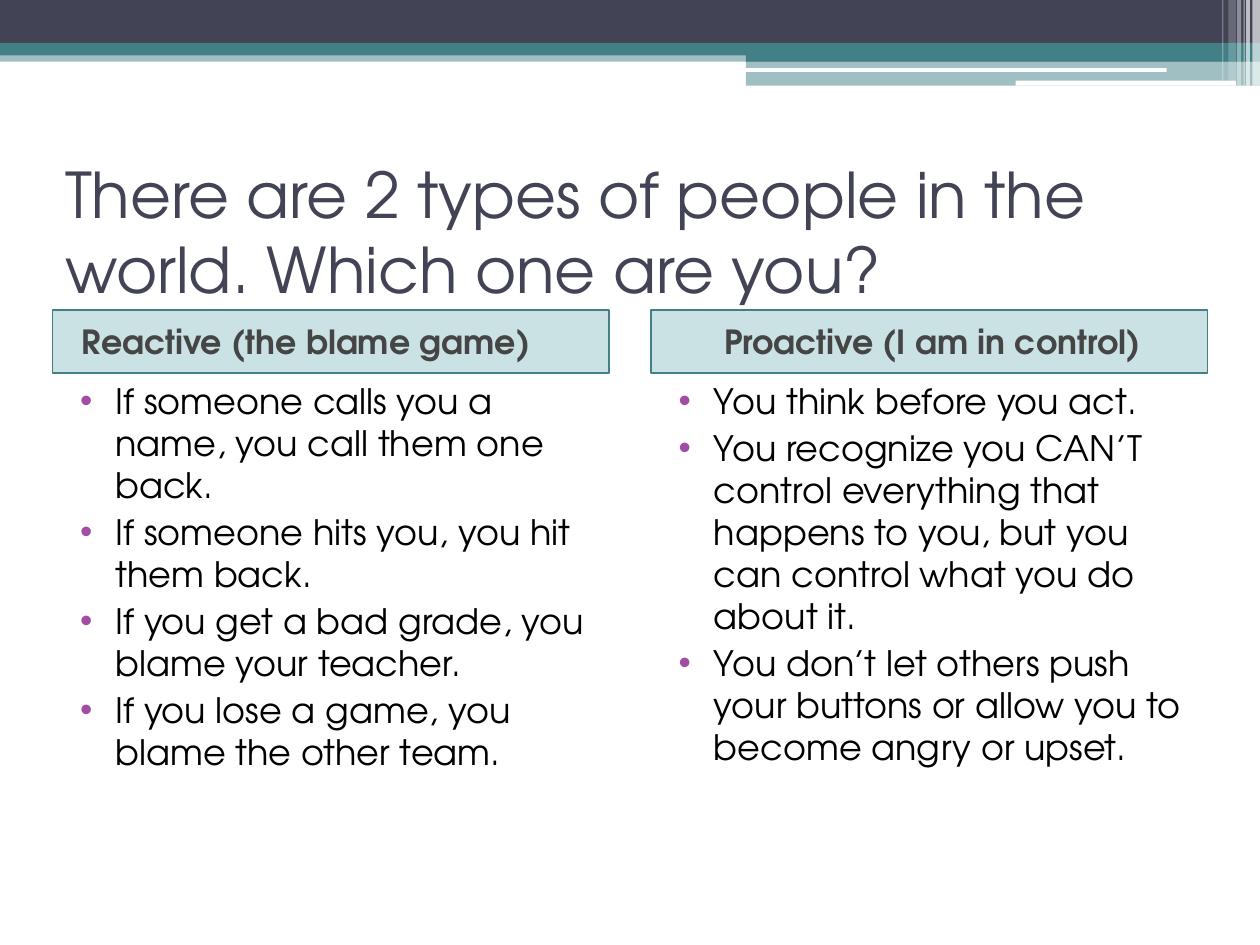
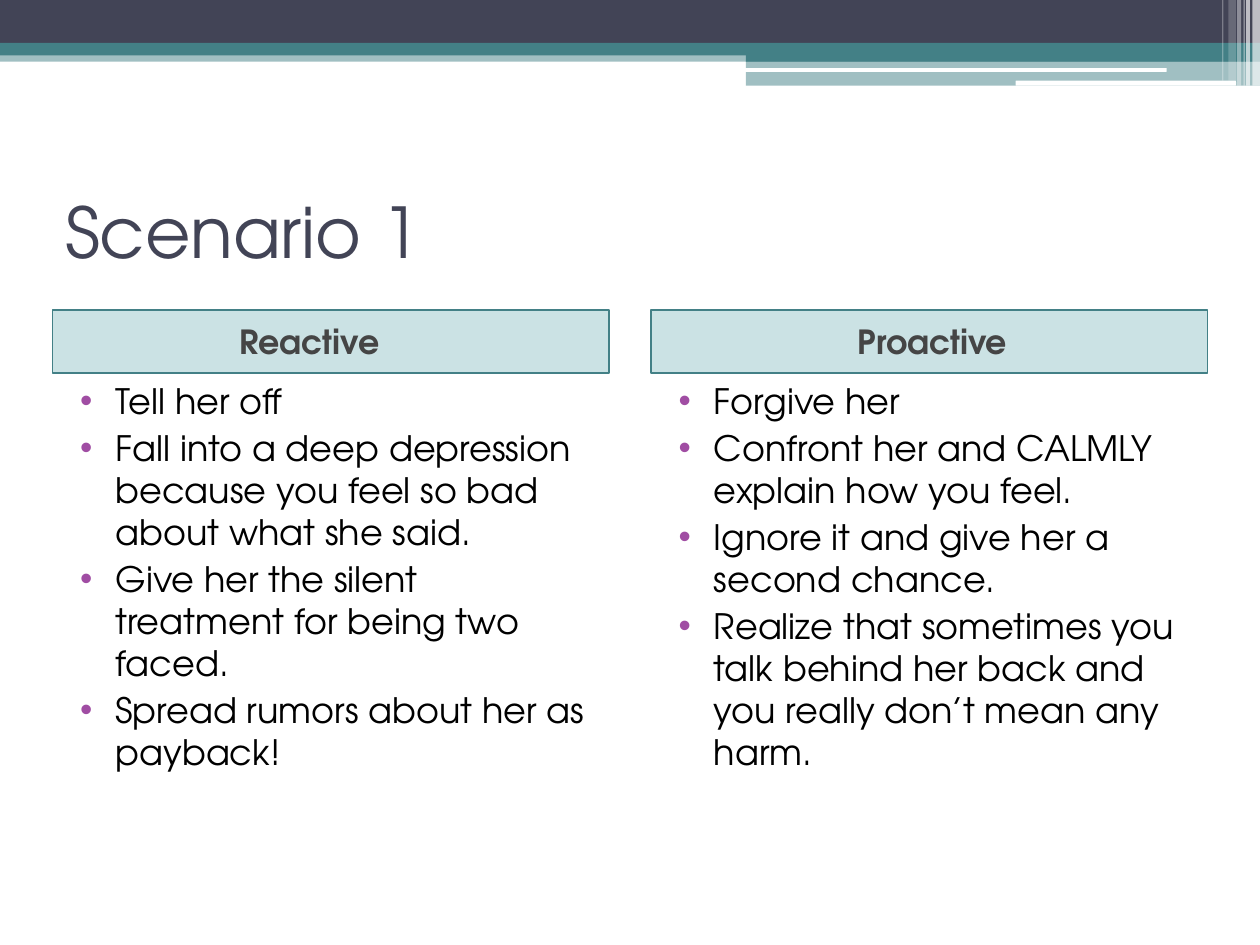
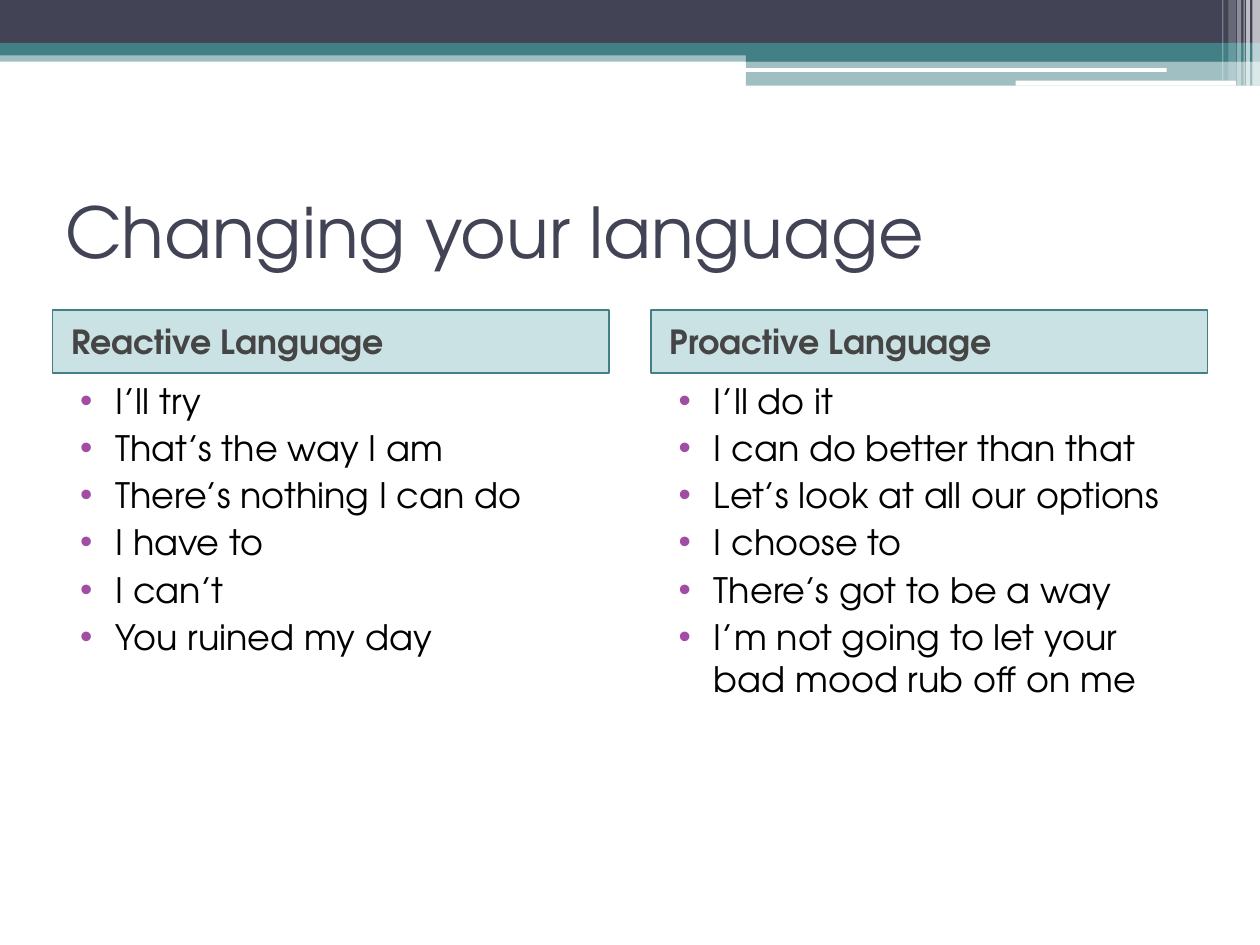
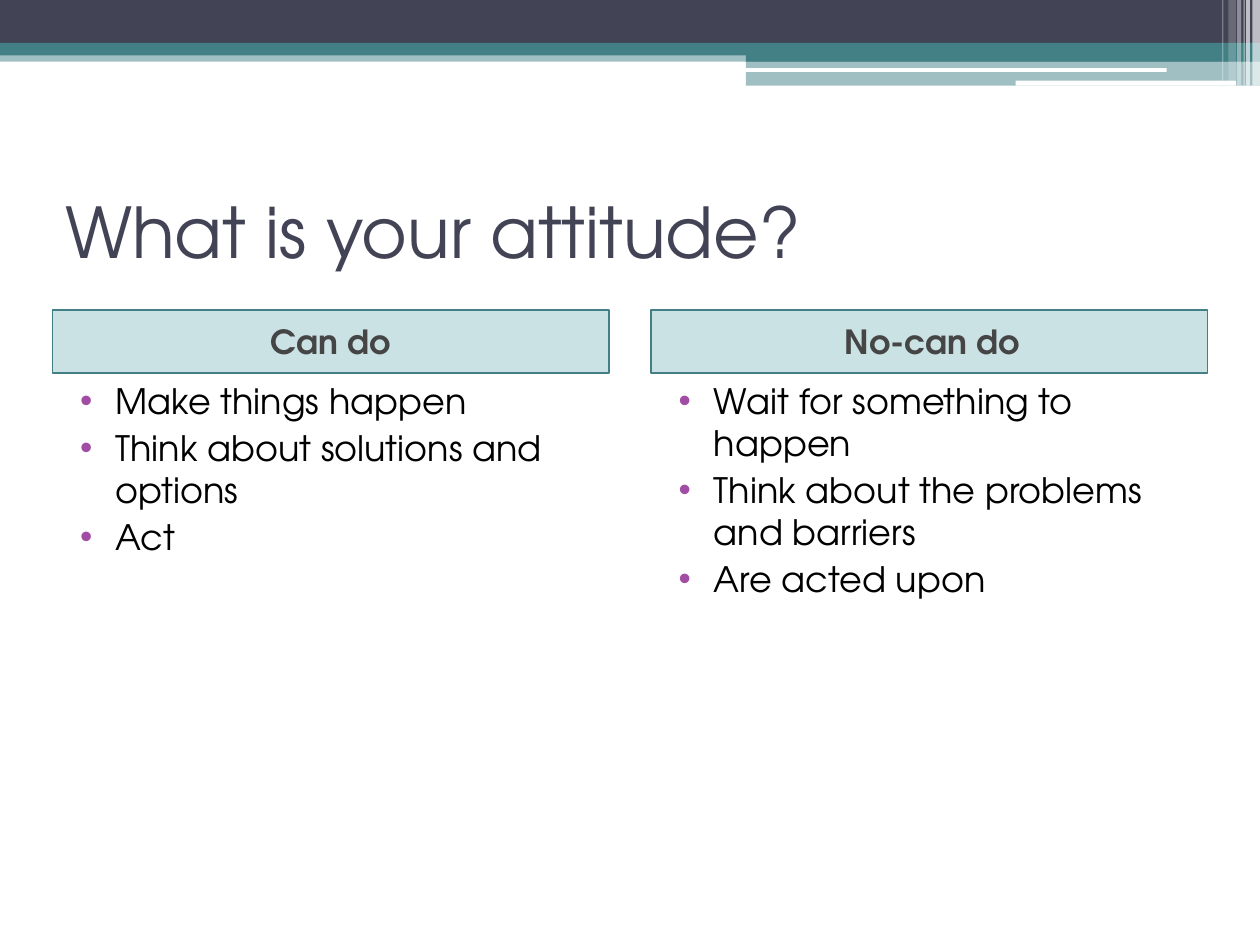
import pptx
import pptx.util
import pptx.dml.color
import pptx.enum.shapes
import pptx.enum.text
import pptx.oxml.ns
from lxml import etree

Pt = pptx.util.Pt
qn = pptx.oxml.ns.qn
SHAPE = pptx.enum.shapes.MSO_SHAPE
ALIGN = pptx.enum.text.PP_ALIGN

COLORS = {
    "navy": "424456",
    "teal": "438086",
    "panel": "328E97",
    "header": "454545",
    "bullet": "A04DA3",
    "black": "000000",
    "white": "FFFFFF",
}
FONT = "TeX Gyre Adventor"

# Page grid
MARGIN, COL_W, GUTTER = 30, 318, 24
TITLE_TOP, TITLE_H = 90, 84
HEADER_TOP, HEADER_H, LIST_H = 177, 36, 306

# Bands: shape, left, top, width, height, colour, opacity in percent
BANDS = [
    (SHAPE.RECTANGLE, 0, 28.8, 720, 6.5, "teal", 50),
    (SHAPE.RECTANGLE, 0, 0, 720, 24.5, "navy", 100),
    (SHAPE.RECTANGLE, 0, 24.5, 720, 7.2, "teal", 100),
    (SHAPE.RECTANGLE, 426.2, 28.1, 293.8, 7.2, "teal", 100),
    (SHAPE.RECTANGLE, 426.2, 34.6, 293.8, 14.4, "teal", 50),
    (SHAPE.ROUNDED_RECTANGLE, 425.5, 38.9, 241.2, 2.2, "white", 100),
    (SHAPE.ROUNDED_RECTANGLE, 580.3, 46.1, 126, 2.9, "white", 100),
]
# Stripes at the right edge: left, width, height, opacity in percent
STRIPES = [
    (715.7, 4.3, 49, 65),
    (712.1, 2.2, 49, 65),
    (710.6, 0.7, 49, 60),
    (707, 2.2, 49, 40),
    (702, 4.3, 46.1, 20),
    (698.4, 0.7, 46.1, 30),
]

# Title, title size, header alignment, then header and list of each column
SLIDES = [
    ("There are 2 types of people in the world. Which one are you?", 36, ALIGN.CENTER, [
        ("Reactive (the blame game)\t", [
            "If someone calls you a name, you call them one back.",
            "If someone hits you, you hit them back.",
            "If you get a bad grade, you blame your teacher.",
            "If you lose a game, you blame the other team."]),
        ("Proactive (I am in control)", [
            "You think before you act.",
            "You recognize you CAN’T control everything that happens to you, "
            "but you can control what you do about it.",
            "You don’t let others push your buttons or allow you to become "
            "angry or upset."])]),
    ("Scenario 1", 40, ALIGN.CENTER, [
        ("Reactive\t", [
            "Tell her off",
            "Fall into a deep depression because you feel so bad about what she said.",
            "Give her the silent treatment for being two faced.",
            "Spread rumors about her as payback!"]),
        ("Proactive", [
            "Forgive her",
            "Confront her and CALMLY explain how you feel.",
            "Ignore it and give her a second chance.",
            "Realize that sometimes you talk behind her back and you really "
            "don’t mean any harm."])]),
    ("Changing your language", 40, ALIGN.LEFT, [
        ("Reactive Language\t", [
            "I’ll try",
            "That’s the way I am",
            "There’s nothing I can do",
            "I have to",
            "I can’t",
            "You ruined my day"]),
        ("Proactive Language", [
            "I’ll do it",
            "I can do better than that",
            "Let’s look at all our options",
            "I choose to",
            "There’s got to be a way",
            "I’m not going to let your bad mood rub off on me"])]),
    ("What is your attitude?", 40, ALIGN.CENTER, [
        ("Can do\t", [
            "Make things happen",
            "Think about solutions and options",
            "Act"]),
        ("No-can do", [
            "Wait for something to happen",
            "Think about the problems and barriers",
            "Are acted upon"])]),
]


def rgb(name):
    return pptx.dml.color.RGBColor.from_string(COLORS[name])


class Deck:
    def __init__(self):
        self.prs = pptx.Presentation()
        self.prs.slide_width, self.prs.slide_height = Pt(720), Pt(540)
        self.layout = self.prs.slide_layouts.get_by_name("Comparison")
        self.s = None

    def new_slide(self):
        self.s = self.prs.slides.add_slide(self.layout)

    def fill(self, sp, color, opacity=100):
        sp.fill.solid()
        sp.fill.fore_color.rgb = rgb(color)
        if opacity < 100:
            clr = next(sp.element.iter(qn("a:srgbClr")))
            etree.SubElement(clr, qn("a:alpha")).set("val", str(opacity * 1000))

    def band(self, kind, x, y, w, h, color, opacity):
        """Draw a band and move it to the layout, so every slide shows it."""
        sp = self.s.shapes.add_shape(kind, Pt(x), Pt(y), Pt(w), Pt(h))
        sp.shadow.inherit = False
        self.fill(sp, color, opacity)
        sp.line.fill.background()
        tree = self.layout.shapes.element
        sp.element.nvSpPr.cNvPr.set("id", str(100 + len(tree)))
        tree.append(sp.element)

    def text(self, idx, box, lines, size, color, bold=False, middle=True):
        """Place a placeholder, write its paragraphs and format the runs."""
        sp = self.s.placeholders[idx]
        sp.left, sp.top, sp.width, sp.height = (Pt(v) for v in box)
        tf = sp.text_frame
        tf.text = "\n".join(lines)
        tf.word_wrap = True
        tf.auto_size = pptx.enum.text.MSO_AUTO_SIZE.NONE
        anchor = pptx.enum.text.MSO_ANCHOR
        tf.vertical_anchor = anchor.MIDDLE if middle else anchor.TOP
        for p in tf.paragraphs:
            p.alignment = ALIGN.LEFT
            for r in p.runs:
                r.font.name, r.font.size, r.font.bold = FONT, Pt(size), bold
                r.font.color.rgb = rgb(color)
        return sp

    def indent(self, p, left, first):
        p.space_before = Pt(3)
        pPr = p._p.get_or_add_pPr()
        pPr.set("marL", str(Pt(left)))
        pPr.set("indent", str(Pt(first)))
        return pPr

    def title(self, text, size):
        box = (MARGIN, TITLE_TOP, 2 * COL_W + GUTTER, TITLE_H)
        self.text(0, box, [text], size, "navy")

    def header(self, idx, x, text, align):
        box = (x, HEADER_TOP, COL_W, HEADER_H)
        sp = self.text(idx, box, [text], 19, "header", bold=True)
        self.fill(sp, "panel", 25)
        sp.line.color.rgb = rgb("teal")
        sp.line.width = Pt(1)
        p = sp.text_frame.paragraphs[0]
        p.alignment = align
        self.indent(p, 3.6, 0)

    def bullets(self, idx, x, items):
        box = (x, HEADER_TOP + HEADER_H, COL_W, LIST_H)
        sp = self.text(idx, box, items, 20, "black", middle=False)
        for p in sp.text_frame.paragraphs:
            pPr = self.indent(p, 28.8, -20.2)
            clr = etree.SubElement(pPr, qn("a:buClr"))
            etree.SubElement(clr, qn("a:srgbClr")).set("val", COLORS["bullet"])
            etree.SubElement(pPr, qn("a:buFont")).set("typeface", "Arial")
            etree.SubElement(pPr, qn("a:buChar")).set("char", "•")


def main():
    deck = Deck()
    for n, (title, size, align, columns) in enumerate(SLIDES):
        deck.new_slide()
        # Shared bands, drawn once
        if n == 0:
            for band in BANDS:
                deck.band(*band)
            for x, w, h, opacity in STRIPES:
                deck.band(SHAPE.RECTANGLE, x, 0, w, h, "white", opacity)
        # Title and the two columns
        deck.title(title, size)
        for col, (header, items) in enumerate(columns):
            x = MARGIN + col * (COL_W + GUTTER)
            deck.header(1 + 2 * col, x, header, align)
            deck.bullets(2 + 2 * col, x, items)
    deck.prs.save("out.pptx")


if __name__ == "__main__":
    main()
